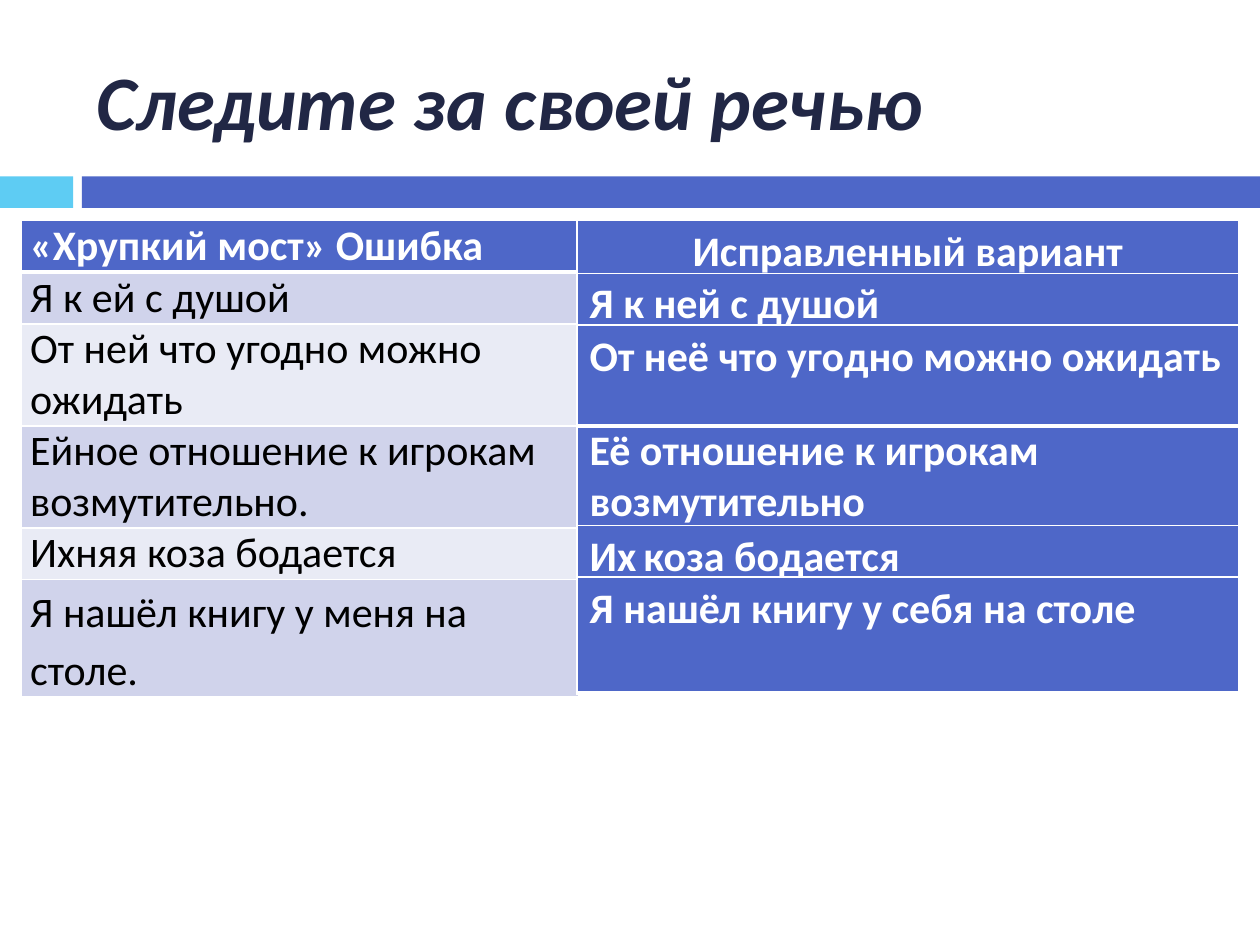
from dataclasses import dataclass

from lxml import etree
from pptx import Presentation
from pptx.dml.color import RGBColor
from pptx.enum.shapes import MSO_SHAPE
from pptx.enum.text import MSO_ANCHOR, PP_ALIGN
from pptx.oxml.ns import qn
from pptx.util import Inches, Pt

RECTANGLE = MSO_SHAPE.RECTANGLE
MIDDLE = MSO_ANCHOR.MIDDLE
LEFT, CENTER = PP_ALIGN.LEFT, PP_ALIGN.CENTER


@dataclass(frozen=True)
class Theme:
    font: str = "Calibri"
    title_size: int = 44
    body_size: int = 24
    small_size: int = 18
    title: str = "212745"
    blue: str = "4E67C8"
    cyan: str = "5ECCF3"
    dark_band: str = "D0D3EB"
    light_band: str = "E9EBF5"
    white: str = "FFFFFF"
    black: str = "000000"


class SlideBuilder:
    def __init__(self, slide, theme):
        self.slide = slide
        self.theme = theme

    def bar(self, left, top, width, height, color):
        box = self.slide.shapes.add_shape(
            RECTANGLE, Inches(left), Inches(top), Inches(width), Inches(height))
        box.shadow.inherit = False
        box.fill.solid()
        box.fill.fore_color.rgb = RGBColor.from_string(color)
        box.line.fill.background()

    def add_run(self, para, text, size, color, bold=False, italic=False):
        span = para.add_run()
        span.text = text
        font = span.font
        font.name, font.size = self.theme.font, Pt(size)
        font.bold, font.italic = bold, italic
        font.color.rgb = RGBColor.from_string(color)

    def title(self, text, left, top, width, height):
        box = self.slide.shapes.add_textbox(
            Inches(left), Inches(top), Inches(width), Inches(height))
        frame = box.text_frame
        frame.word_wrap = True
        frame.vertical_anchor = MIDDLE
        self.add_run(frame.paragraphs[0], text, self.theme.title_size,
                     self.theme.title, bold=True, italic=True)

    def table(self, left, top, width, heights):
        frame = self.slide.shapes.add_table(
            len(heights), 1, Inches(left), Inches(top),
            Inches(width), Inches(sum(heights)))
        table = frame.table
        table.first_row = table.horz_banding = False
        for row, height in zip(table.rows, heights):
            row.height = Inches(height)
        return table

    def cell(self, cell, runs, fill, color, bold, bottom=1, align=LEFT, spacing=None):
        cell.fill.solid()
        cell.fill.fore_color.rgb = RGBColor.from_string(fill)
        self.borders(cell, bottom)
        para = cell.text_frame.paragraphs[0]
        para.alignment = align
        if spacing:
            para.line_spacing = spacing
        for text, size in runs:
            self.add_run(para, text, size, color, bold)

    def borders(self, cell, bottom):
        properties = cell._tc.get_or_add_tcPr()
        widths = {"a:lnL": 1, "a:lnR": 1, "a:lnT": 1, "a:lnB": bottom}
        for position, (tag, width) in enumerate(widths.items()):
            line = etree.Element(qn(tag), w=str(Pt(width)))
            fill = etree.SubElement(line, qn("a:solidFill"))
            etree.SubElement(fill, qn("a:srgbClr"), val=self.theme.white)
            properties.insert(position, line)


def main():
    theme = Theme()
    deck = Presentation()
    deck.slide_width, deck.slide_height = Inches(10), Inches(7.5)
    page = SlideBuilder(deck.slides.add_slide(deck.slide_layouts[6]), theme)
    body = theme.body_size

    # Title and divider bars
    page.bar(0, 1.4, 0.58, 0.25, theme.cyan)
    page.bar(0.65, 1.4, 9.35, 0.25, theme.blue)
    page.title("Следите за своей речью", 0.67, 0.25, 8.92, 1.08)

    # Mistakes: one banded table
    mistakes = [
        ("«Хрупкий мост» Ошибка", 0.41),
        ("Я к ей с душой", 0.41),
        ("От ней что угодно можно ожидать", 0.81),
        ("Ейное отношение к игрокам возмутительно.", 0.81),
        ("Ихняя коза бодается", 0.41),
        ("Я нашёл книгу у меня на столе.", 0.93),
    ]
    table = page.table(0.17, 1.75, 4.42, [height for _, height in mistakes])
    last = len(mistakes) - 1
    for index, (text, _) in enumerate(mistakes):
        cell = table.cell(index, 0)
        cell.margin_left = cell.margin_right = Inches(0.07)
        cell.margin_top = cell.margin_bottom = 0
        header = index == 0
        band = theme.dark_band if index % 2 else theme.light_band
        page.cell(cell, [(text, body)],
                  fill=theme.blue if header else band,
                  color=theme.white if header else theme.black,
                  bold=header, bottom=3 if header else 1,
                  spacing=1.15 if index == last else None)

    # Corrections: a separate one-cell table for each, back to front
    corrections = [
        (1.75, 0.5, [("Исправленный вариант", body)], CENTER, None),
        (2.17, 0.5, [("Я к ней с душой", body)], LEFT, Pt(28.8)),
        (3.33, 0.9, [("Её отношение к игрокам возмутительно", body)], LEFT, None),
        (4.17, 0.5, [("Их", body), (" ", theme.small_size),
                     ("коза бодается", body)], LEFT, None),
        (4.58, 0.92, [("Я нашёл книгу у себя на столе", body)], LEFT, None),
        (2.58, 0.8, [("От неё что угодно можно ожидать", body)], LEFT, None),
    ]
    for top, height, runs, align, spacing in corrections:
        table = page.table(4.58, top, 5.25, [height])
        page.cell(table.cell(0, 0), runs, theme.blue, theme.white, bold=True,
                  bottom=3, align=align, spacing=spacing)

    deck.save("out.pptx")


if __name__ == "__main__":
    main()
